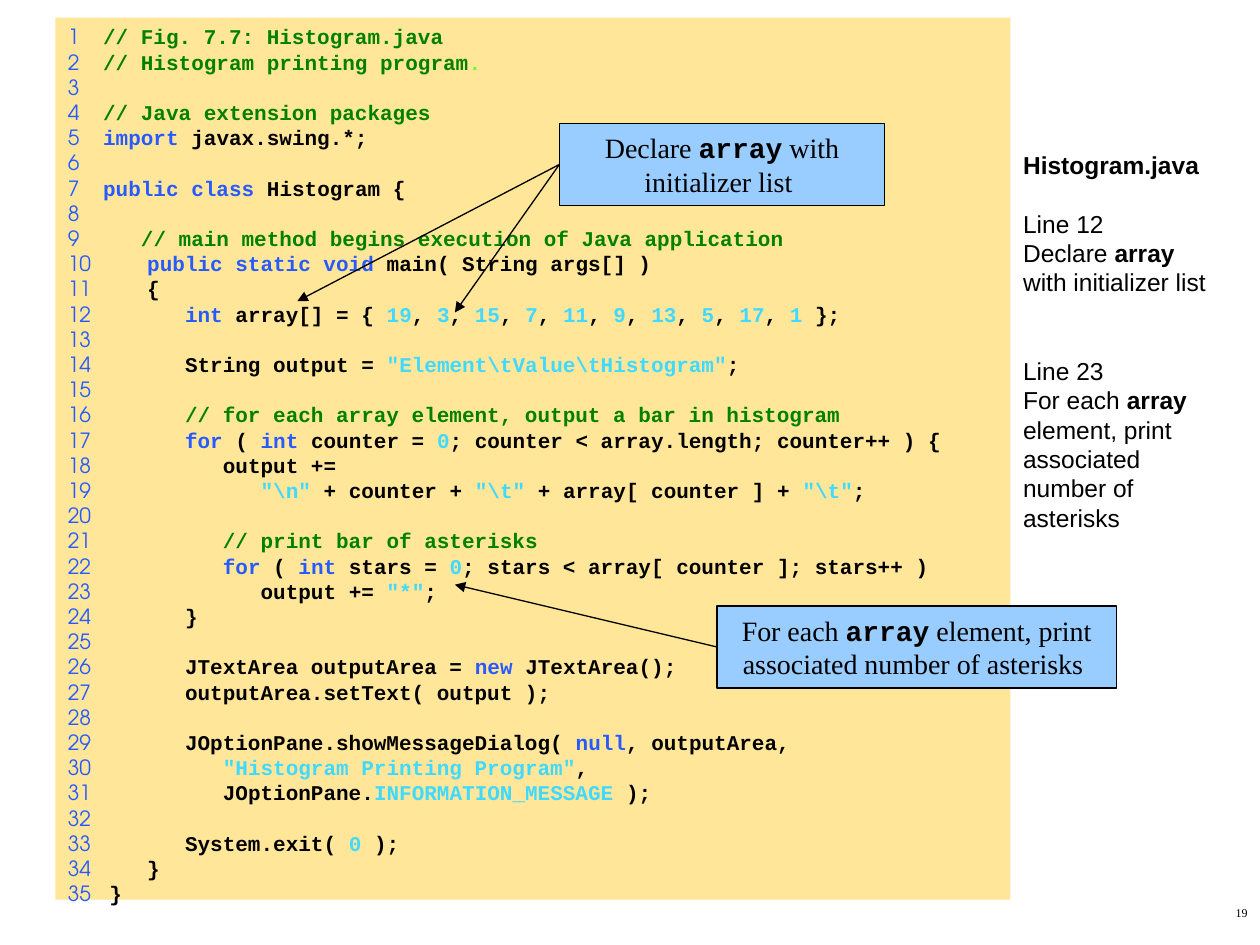
from lxml import etree
from pptx import Presentation, util as u
from pptx.dml.color import RGBColor
from pptx.enum import shapes, text
from pptx.oxml.ns import qn

WIDTH, HEIGHT = u.Inches(10), u.Inches(7.5)
BLACK, BLUE, GREEN, CYAN, LIME = "000000", "275AFF", "008000", "40D9FF", "66FF33"
PANEL, CALLOUT = "FFE699", "99CCFF"
SERIF, SANS, MONO, NUMERAL = "Times New Roman", "Arial", "Courier New", "TeX Gyre Adventor"
INDENT_WIDTH = 0.3
SIDEBAR_LINE = 16.8

CODE_MARKS = {"`": {"color": BLUE}, "~": {"color": CYAN}, "^": {"color": LIME}}
VALUES = ", ".join(f"~{value}~" for value in (19, 3, 15, 7, 11, 9, 13, 5, 17, 1))
BLANK = (0, "")
LISTING = [
    (0, "// Fig. 7.7: Histogram.java"),
    (0, "// Histogram printing program^.^"),
    BLANK,
    (0, "// Java extension packages"),
    (0, "`import` javax.swing.*;"),
    BLANK,
    (0, "`public class` Histogram {"),
    BLANK,
    (1, "// main method begins execution of Java application"),
    (1, "`public static void` main( String args[] )"),
    (1, "{"),
    (2, "`int` array[] = { " + VALUES + " };"),
    BLANK,
    (2, r'String output = ~"Element\tValue\tHistogram"~;'),
    BLANK,
    (2, "// for each array element, output a bar in histogram"),
    (2, "`for` ( `int` counter = ~0~; counter < array.length; counter++ ) {"),
    (3, "output +="),
    (4, r'~"\n"~ + counter + ~"\t"~ + array[ counter ] + ~"\t"~;'),
    BLANK,
    (3, "// print bar of asterisks"),
    (3, "`for` ( `int` stars = ~0~; stars < array[ counter ]; stars++ )"),
    (4, 'output += ~"*"~;'),
    (2, "}"),
    BLANK,
    (2, "JTextArea outputArea = `new` JTextArea();"),
    (2, "outputArea.setText( output );"),
    BLANK,
    (2, "JOptionPane.showMessageDialog( `null`, outputArea,"),
    (3, '~"Histogram Printing Program"~,'),
    (3, "JOptionPane.~INFORMATION_MESSAGE~ );"),
    BLANK,
    (2, "System.exit( ~0~ );"),
    (1, "}"),
    (0, "}"),
]

SIDEBAR = [
    ("`Histogram.java`", 0),
    ("Line 12", 1),
    ("Declare `array` with initializer list", 0),
    ("Line 23", 2),
    ("For each `array` element, print associated number of asterisks", 0),
]


def rgb(code):
    return RGBColor.from_string(code)


def across(percent):
    return round(WIDTH * percent / 100)


def down(percent):
    return round(HEIGHT * percent / 100)


def place(left, top, width, height):
    return across(left), down(top), across(width), down(height)


def write(paragraph, content, font=SERIF, size=12, color=BLACK, bold=False):
    run = paragraph.add_run()
    run.text = content
    run.font.name = font
    run.font.size = u.Pt(size)
    run.font.bold = bold
    run.font.color.rgb = rgb(color)


def write_marked(paragraph, content, marks, **base):
    active, piece = "", ""
    for char in content:
        if char in marks:
            if piece:
                write(paragraph, piece, **{**base, **marks.get(active, {})})
            active, piece = "" if active else char, ""
        else:
            piece += char
    if piece:
        write(paragraph, piece, **base)


def paragraphs(frame):
    yield frame.paragraphs[0]
    while True:
        yield frame.add_paragraph()


def add_panel(slide, box, fill, border=None, anchor=text.MSO_ANCHOR.TOP):
    panel = slide.shapes.add_shape(shapes.MSO_SHAPE.RECTANGLE, *place(*box))
    panel.shadow.inherit = False
    panel.fill.solid()
    panel.fill.fore_color.rgb = rgb(fill)
    if border:
        panel.line.color.rgb = rgb(border)
        panel.line.width = u.Pt(0.75)
    else:
        panel.line.fill.background()
    panel.text_frame.word_wrap = True
    panel.text_frame.vertical_anchor = anchor
    return panel.text_frame


def add_textbox(slide, box):
    frame = slide.shapes.add_textbox(*place(*box)).text_frame
    frame.word_wrap = True
    return frame


def add_listing(slide, box):
    frame = add_panel(slide, box, PANEL)
    lines = enumerate(LISTING, 1)
    for (number, (level, code)), paragraph in zip(lines, paragraphs(frame)):
        gutter = 0.28 if number < 10 else 0.33
        margin = u.Inches(gutter + level * INDENT_WIDTH)
        paragraph.alignment = text.PP_ALIGN.LEFT
        properties = paragraph._p.get_or_add_pPr()
        properties.set("marL", str(margin))
        properties.set("indent", str(-margin))
        write(paragraph, f"{number}\t" if code else str(number), font=NUMERAL, color=BLUE)
        color = GREEN if code.startswith("//") else BLACK
        write_marked(paragraph, code, CODE_MARKS, font=MONO, color=color, bold=True)


def add_sidebar(slide, box):
    frame = add_textbox(slide, box)
    frame.margin_left = 0
    for (content, gap), paragraph in zip(SIDEBAR, paragraphs(frame)):
        paragraph.line_spacing = u.Pt(SIDEBAR_LINE)
        paragraph.space_before = u.Pt(gap * SIDEBAR_LINE)
        write_marked(paragraph, content, {"`": {"bold": True}}, font=SANS, size=14)


def add_arrow(slide, start, tip):
    arrow = slide.shapes.add_connector(
        shapes.MSO_CONNECTOR.STRAIGHT,
        across(start[0]), down(start[1]), across(tip[0]), down(tip[1]))
    arrow.line.color.rgb = rgb(BLACK)
    arrow.line.width = u.Pt(0.75)
    etree.SubElement(arrow.line._get_or_add_ln(), qn("a:tailEnd"), type="triangle")
    etree.SubElement(arrow._element.spPr, qn("a:effectLst"))


def add_callout(slide, box, content, tips):
    frame = add_panel(slide, box, CALLOUT, BLACK, text.MSO_ANCHOR.MIDDLE)
    paragraph = frame.paragraphs[0]
    paragraph.alignment = text.PP_ALIGN.CENTER
    write_marked(paragraph, content, {"`": {"font": MONO, "bold": True}}, size=16)
    left, top, _, height = box
    for tip in tips:
        add_arrow(slide, (left, top + height / 2), tip)


def add_page_number(slide, box, number):
    paragraph = add_textbox(slide, box).paragraphs[0]
    paragraph.alignment = text.PP_ALIGN.RIGHT
    write(paragraph, number, size=6.8)


def main():
    deck = Presentation()
    deck.slide_width, deck.slide_height = WIDTH, HEIGHT
    slide = deck.slides.add_slide(deck.slide_layouts[6])
    add_page_number(slide, (79.2, 95.2, 20.8, 4.8), "19")
    add_sidebar(slide, (81.2, 15.2, 15.7, 66.27))
    add_listing(slide, (4.4, 1.87, 75.8, 93.33))
    add_callout(slide, (44.4, 13.07, 25.8, 8.67),
                "Declare `array` with initializer list ",
                [(36.1, 33.07), (23.6, 31.87)])
    add_callout(slide, (56.9, 64.13, 31.7, 8.67),
                "For each `array` element, print associated number of asterisks ",
                [(36.1, 61.87)])
    deck.save("out.pptx")


if __name__ == "__main__":
    main()
